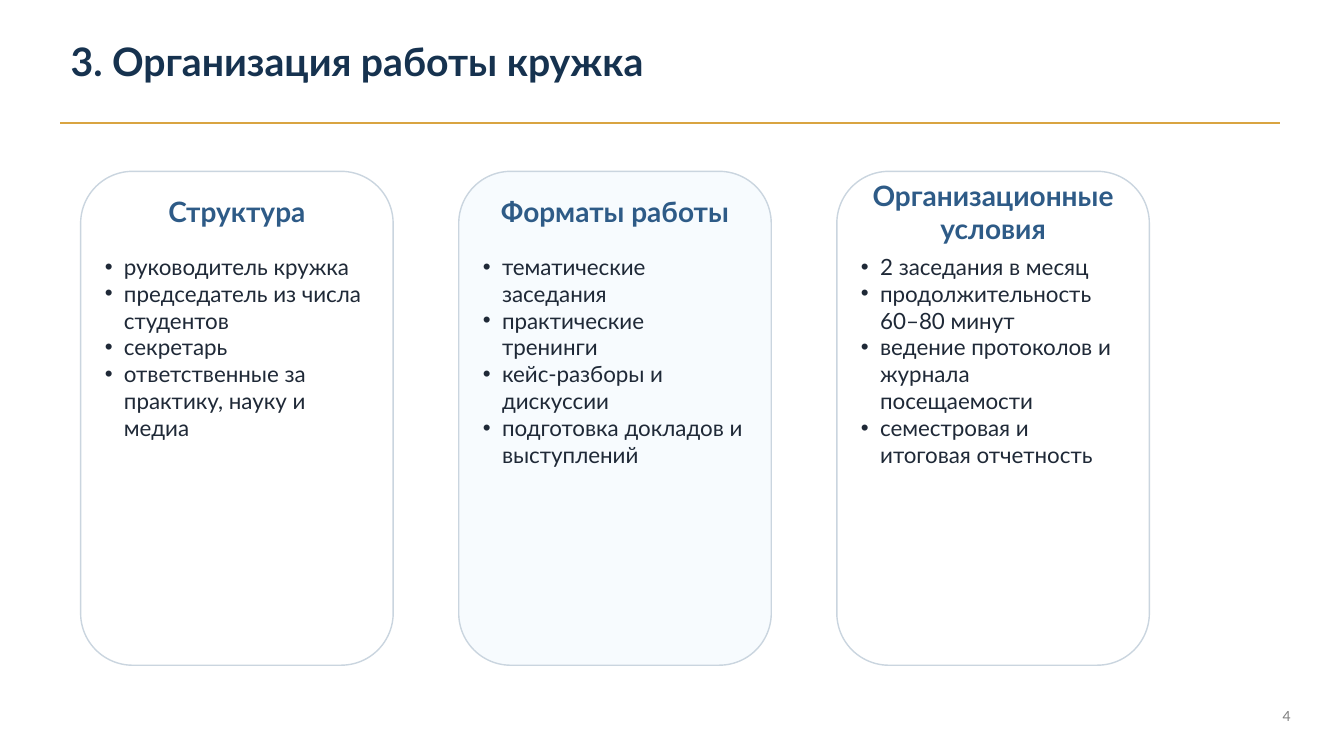
from pptx import Presentation
from pptx.dml.color import RGBColor
from pptx.enum.shapes import MSO_CONNECTOR as Line, MSO_SHAPE as Shape
from pptx.enum.text import MSO_ANCHOR as Anchor, MSO_AUTO_SIZE as Fit, PP_ALIGN as Align
from pptx.oxml.ns import qn
from pptx.util import Inches, Pt
from lxml.etree import SubElement

NAVY = RGBColor(0x16, 0x32, 0x4F)
BLUE = RGBColor(0x2E, 0x5B, 0x87)
INK = RGBColor(0x1F, 0x29, 0x37)
GRAY = RGBColor(0x80, 0x80, 0x80)
GOLD = RGBColor(0xD9, 0xA4, 0x41)
EDGE = RGBColor(0xCA, 0xD5, 0xDF)
WHITE = RGBColor(0xFF, 0xFF, 0xFF)
PALE = RGBColor(0xF7, 0xFB, 0xFE)

CARDS = [
    ("Структура", WHITE, [
        "руководитель кружка",
        "председатель из числа студентов",
        "секретарь",
        "ответственные за практику, науку и медиа",
    ]),
    ("Форматы работы", PALE, [
        "тематические заседания",
        "практические тренинги",
        "кейс-разборы и дискуссии",
        "подготовка докладов и выступлений",
    ]),
    ("Организационные условия", WHITE, [
        "2 заседания в месяц",
        "продолжительность 60–80 минут",
        "ведение протоколов и журнала посещаемости",
        "семестровая и итоговая отчетность",
    ]),
]


def add_run(para, text, size, color, bold=False):
    run = para.add_run()
    run.text = text
    font = run.font
    font.name = "Lato"
    font.size = Pt(size)
    font.bold = bold
    font.color.rgb = color


def add_box(left, top, width, height, anchor=Anchor.MIDDLE):
    box = slide.shapes.add_textbox(Inches(left), Inches(top), Inches(width), Inches(height))
    frame = box.text_frame
    frame.word_wrap = True
    frame.auto_size = Fit.NONE
    frame.vertical_anchor = anchor
    return frame


deck = Presentation()
deck.slide_width = Inches(13.33)
deck.slide_height = Inches(7.5)
slide = deck.slides.add_slide(deck.slide_layouts[5])

title = slide.shapes.title
title.left, title.top = Inches(0.6), Inches(0.35)
title.width, title.height = Inches(9.8), Inches(0.5)
frame = title.text_frame
frame.auto_size = Fit.NONE
frame.vertical_anchor = Anchor.MIDDLE
para = frame.paragraphs[0]
para.alignment = Align.LEFT
add_run(para, "3. Организация работы кружка", 28, NAVY, True)

rule = slide.shapes.add_connector(
    Line.STRAIGHT, Inches(0.6), Inches(1.22), Inches(12.7), Inches(1.22))
rule.line.color.rgb = GOLD
rule.line.width = Pt(1)
SubElement(rule._element.spPr, qn("a:effectLst"))

for col, (head, fill, items) in enumerate(CARDS):
    left = 0.8 + 3.75 * col
    card = slide.shapes.add_shape(
        Shape.ROUNDED_RECTANGLE, Inches(left), Inches(1.7), Inches(3.1), Inches(4.9))
    card.shadow.inherit = False
    card.fill.solid()
    card.fill.fore_color.rgb = fill
    card.line.color.rgb = EDGE
    card.line.width = Pt(1)

    para = add_box(left + 0.2, 1.95, 2.7, 0.3).paragraphs[0]
    para.alignment = Align.CENTER
    add_run(para, head, 20, BLUE, True)

    frame = add_box(left + 0.18, 2.45, 2.7, 3.7, Anchor.TOP)
    frame.margin_left = frame.margin_right = Inches(0.06)
    frame.margin_top = frame.margin_bottom = Inches(0.06)
    for row, item in enumerate(items):
        para = frame.add_paragraph() if row else frame.paragraphs[0]
        props = para._p.get_or_add_pPr()
        props.set("marL", str(Inches(0.19)))
        props.set("indent", str(-Inches(0.19)))
        SubElement(props, qn("a:buFont")).set("typeface", "Arial")
        SubElement(props, qn("a:buChar")).set("char", "•")
        add_run(para, item, 16, INK)

para = add_box(12.6, 7, 0.3, 0.2).paragraphs[0]
para.alignment = Align.RIGHT
add_run(para, "4", 10, GRAY)

deck.save("out.pptx")
